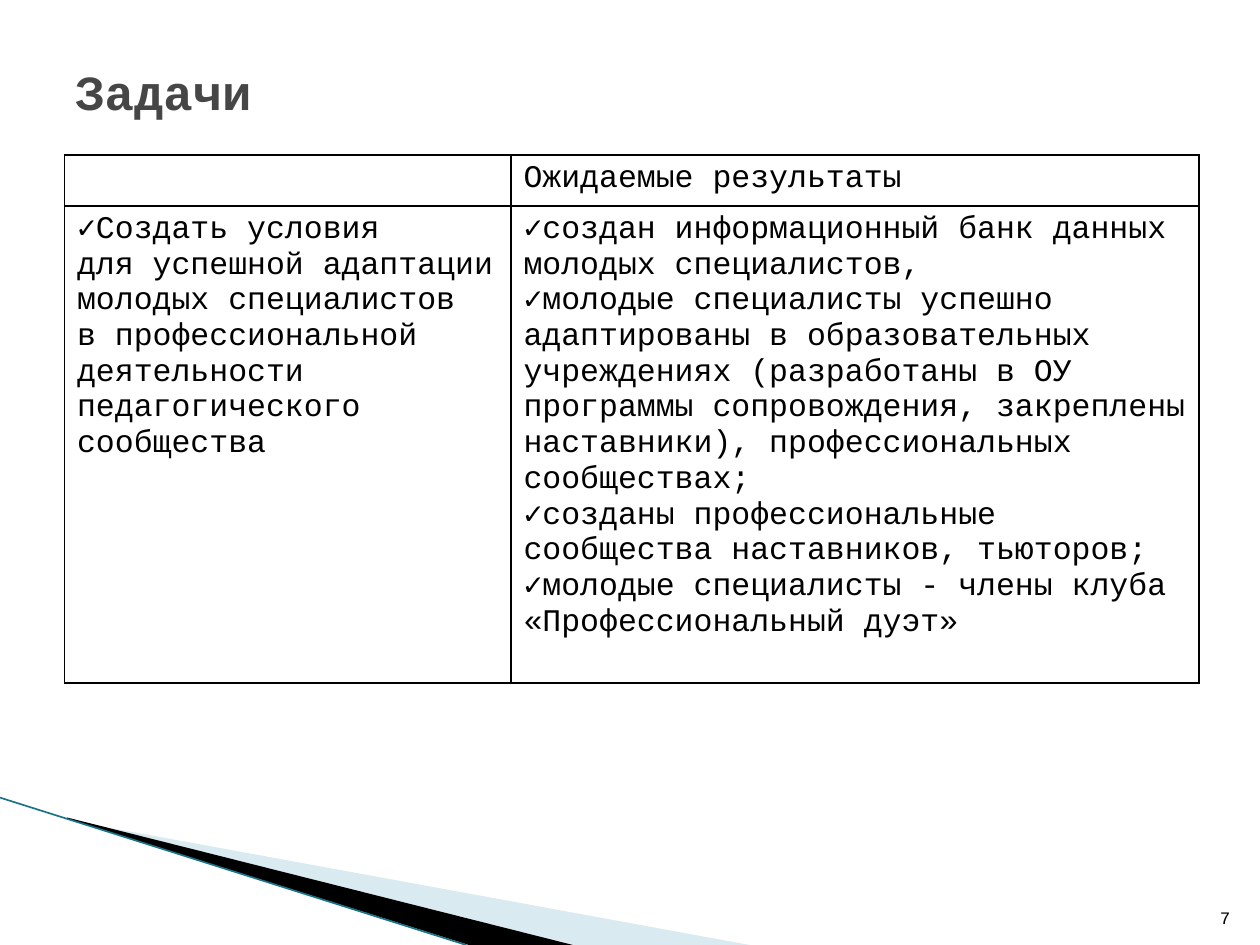
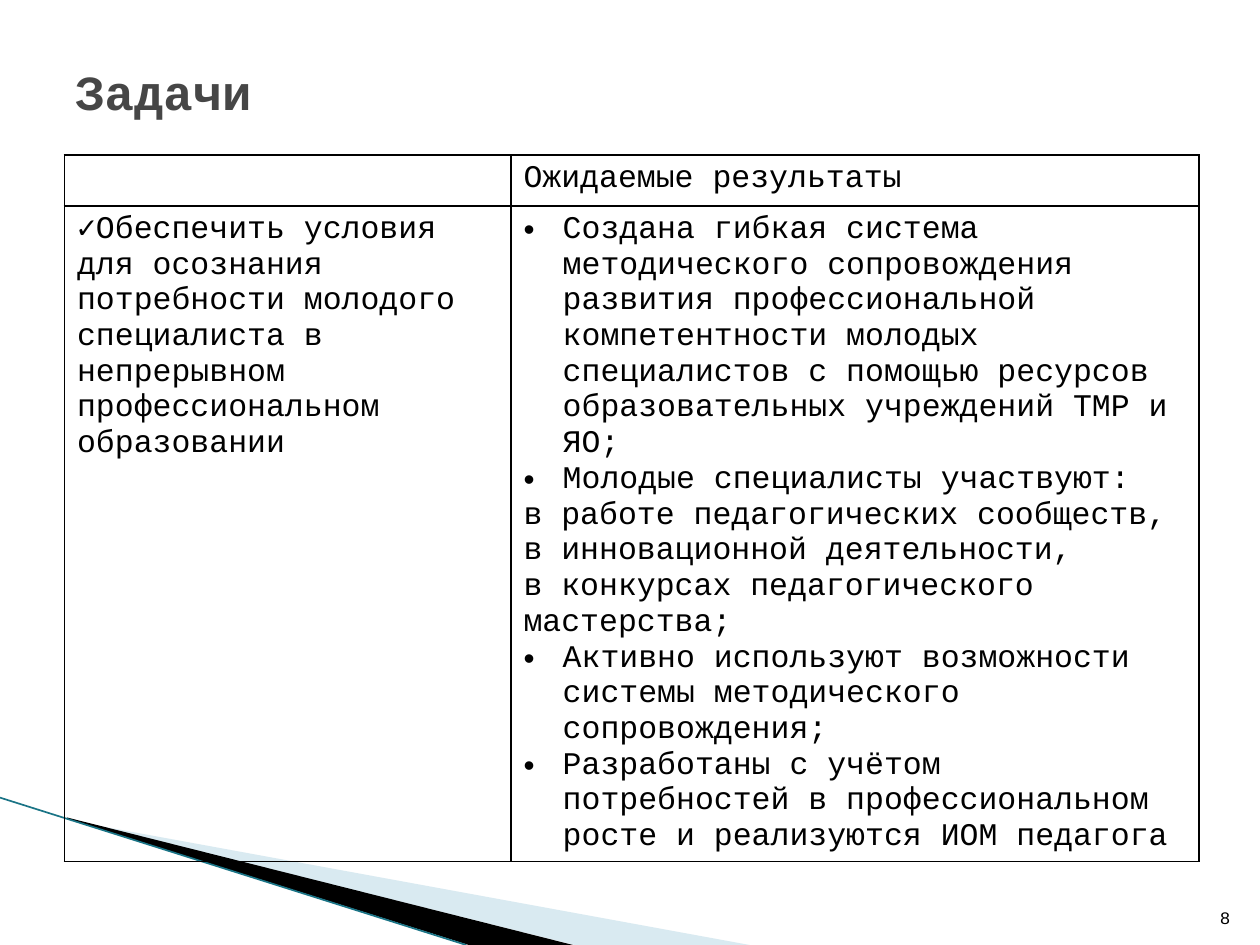
from dataclasses import dataclass

from lxml.etree import SubElement
from pptx import Presentation
from pptx.dml.color import RGBColor
from pptx.enum.shapes import MSO_CONNECTOR
from pptx.enum.text import MSO_ANCHOR, PP_ALIGN
from pptx.oxml.ns import qn
from pptx.util import Cm, Pt

COLORS = {"title": "464646", "text": "000000", "border": "000000",
          "pale wedge": "A0CBDC", "dark wedge": "000000", "edge": "1A7486"}
FONT = "Courier New"
COLUMN_WIDTHS = (9.0, 13.87)
HEADER_HEIGHT = 1.03
RESULTS_HEADING = "Ожидаемые результаты"


@dataclass(frozen=True)
class Line:
    text: str
    bulleted: bool = False


@dataclass(frozen=True)
class TaskSlide:
    number: int
    body_height: float
    task: tuple[Line, ...]
    results: tuple[Line, ...]


@dataclass(frozen=True)
class Wedge:
    color: str
    points: tuple[tuple[float, float], ...]
    opacity: int = 100


@dataclass(frozen=True)
class Label:
    left: float
    top: float
    width: float
    height: float
    size: int
    color: str
    anchor: MSO_ANCHOR
    alignment: PP_ALIGN
    bold: bool = False


TITLE = Label(1.27, 0.76, 22.86, 2.16, 28, "title", MSO_ANCHOR.MIDDLE, PP_ALIGN.LEFT, True)
PAGE_NUMBER = Label(24.03, 17.81, 1.02, 1.02, 10, "text", MSO_ANCHOR.BOTTOM, PP_ALIGN.RIGHT)

WEDGES = (
    Wedge("pale wedge", ((1.4, 16.54), (15.11, 19.05), (11.58, 19.05), (1.4, 16.51)), 40),
    Wedge("dark wedge", ((1.35, 16.48), (11.55, 19.05), (9.45, 19.05), (1.37, 16.51))),
)

SLIDES = (
    TaskSlide(
        7, 9.62,
        (Line("✓Создать условия"),
         Line("для успешной адаптации молодых специалистов"),
         Line("в профессиональной деятельности педагогического сообщества")),
        (Line("✓создан информационный банк данных молодых специалистов,"),
         Line("✓молодые специалисты успешно адаптированы в образовательных учреждениях "
              "(разработаны в ОУ программы сопровождения, закреплены наставники), "
              "профессиональных сообществах;"),
         Line("✓созданы профессиональные сообщества наставников, тьюторов;"),
         Line("✓молодые специалисты - члены клуба «Профессиональный дуэт»")),
    ),
    TaskSlide(
        8, 13.2,
        (Line("✓Обеспечить условия для осознания потребности молодого специалиста "
              "в непрерывном профессиональном образовании"),),
        (Line("Создана гибкая система методического сопровождения развития "
              "профессиональной компетентности молодых специалистов с помощью "
              "ресурсов образовательных учреждений ТМР и ЯО;", True),
         Line("Молодые специалисты участвуют:", True),
         Line("в работе педагогических сообществ,"),
         Line("в инновационной деятельности,"),
         Line("в конкурсах педагогического мастерства;"),
         Line("Активно используют возможности системы методического сопровождения;", True),
         Line("Разработаны с учётом потребностей в профессиональном росте "
              "и реализуются ИОМ педагога", True)),
    ),
)


def rgb(name: str) -> RGBColor:
    return RGBColor.from_string(COLORS[name])


def style_font(paragraph, size: int, color: str, bold: bool = False) -> None:
    font = paragraph.font
    font.name, font.size, font.bold = FONT, Pt(size), bold
    font.color.rgb = rgb(color)


def add_wedge(slide, wedge: Wedge) -> None:
    start, *others = [(Cm(x), Cm(y)) for x, y in wedge.points]
    builder = slide.shapes.build_freeform(*start)
    builder.add_line_segments(others)
    shape = builder.convert_to_shape()
    shape.shadow.inherit = False
    shape.line.fill.background()
    shape.fill.solid()
    shape.fill.fore_color.rgb = rgb(wedge.color)
    if wedge.opacity < 100:
        color = shape._element.spPr.find(f"{qn('a:solidFill')}/{qn('a:srgbClr')}")
        SubElement(color, qn("a:alpha"), val=str(wedge.opacity * 1000))


def add_corner_decoration(slide) -> None:
    for wedge in WEDGES:
        add_wedge(slide, wedge)
    edge = slide.shapes.add_connector(
        MSO_CONNECTOR.STRAIGHT, Cm(0), Cm(16.08), Cm(9.4), Cm(19.05))
    edge.line.color.rgb = rgb("edge")
    edge.line.width = Pt(0.95)
    SubElement(edge._element.spPr, qn("a:effectLst"))


def add_label(slide, label: Label, text: str) -> None:
    box = slide.shapes.add_textbox(
        Cm(label.left), Cm(label.top), Cm(label.width), Cm(label.height))
    frame = box.text_frame
    frame.word_wrap = True
    frame.vertical_anchor = label.anchor
    paragraph = frame.paragraphs[0]
    paragraph.text = text
    paragraph.alignment = label.alignment
    style_font(paragraph, label.size, label.color, label.bold)


def add_bullet(paragraph) -> None:
    properties = paragraph._p.get_or_add_pPr()
    properties.set("marL", str(Cm(0.79)))
    properties.set("indent", str(-Cm(0.79)))
    SubElement(properties, qn("a:buFont"), typeface="Arial")
    SubElement(properties, qn("a:buChar"), char="•")


def outline_cell(cell) -> None:
    properties = cell._tc.get_or_add_tcPr()
    for side in ("lnL", "lnR", "lnT", "lnB"):
        border = SubElement(properties, qn(f"a:{side}"), w=str(Pt(1)))
        fill = SubElement(border, qn("a:solidFill"))
        SubElement(fill, qn("a:srgbClr"), val=COLORS["border"])
    cell.fill.background()


def fill_cell(cell, lines: tuple[Line, ...]) -> None:
    outline_cell(cell)
    frame = cell.text_frame
    for index, line in enumerate(lines):
        paragraph = frame.add_paragraph() if index else frame.paragraphs[0]
        paragraph.text = line.text
        if line.bulleted:
            add_bullet(paragraph)
        style_font(paragraph, 18, "text")


def add_task_table(slide, content: TaskSlide) -> None:
    heights = (HEADER_HEIGHT, content.body_height)
    table = slide.shapes.add_table(
        2, 2, Cm(1.3), Cm(3.12), Cm(sum(COLUMN_WIDTHS)), Cm(sum(heights))).table
    table.first_row = table.horz_banding = False
    for column, width in zip(table.columns, COLUMN_WIDTHS):
        column.width = Cm(width)
    for row, height in zip(table.rows, heights):
        row.height = Cm(height)
    texts = ((), (Line(RESULTS_HEADING),), content.task, content.results)
    for cell, lines in zip(table.iter_cells(), texts):
        fill_cell(cell, lines)


def main() -> None:
    presentation = Presentation()
    presentation.slide_width, presentation.slide_height = Cm(25.4), Cm(19.05)
    blank_layout = presentation.slide_layouts[6]
    for content in SLIDES:
        slide = presentation.slides.add_slide(blank_layout)
        add_corner_decoration(slide)
        add_task_table(slide, content)
        add_label(slide, TITLE, "Задачи")
        add_label(slide, PAGE_NUMBER, str(content.number))
    presentation.save("out.pptx")


if __name__ == "__main__":
    main()
